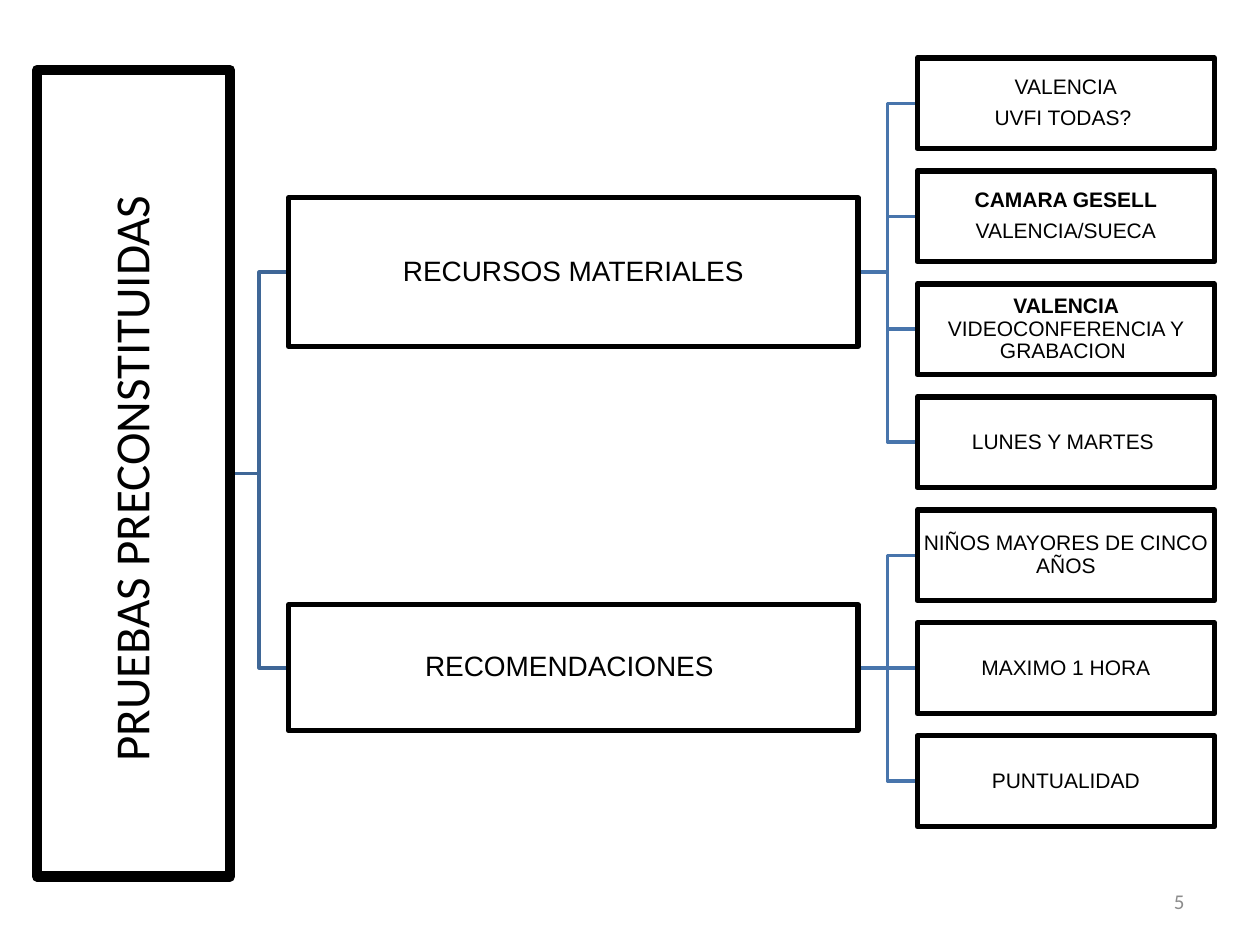
from dataclasses import dataclass

from lxml.etree import SubElement
from pptx import Presentation
from pptx.dml.color import RGBColor
from pptx.enum.shapes import MSO_CONNECTOR, MSO_SHAPE
from pptx.enum.text import MSO_ANCHOR, PP_ALIGN
from pptx.oxml.ns import qn
from pptx.slide import Slide
from pptx.util import Inches, Pt

BLACK = RGBColor(0x00, 0x00, 0x00)
GRAY = RGBColor(0x8C, 0x8C, 0x8C)
TRUNK_BLUE = RGBColor(0x3F, 0x67, 0x97)
BRANCH_BLUE = RGBColor(0x48, 0x75, 0xAC)


@dataclass
class TextRun:
    text: str
    bold: bool = False


@dataclass
class Box:
    left: float
    top: float
    width: float
    height: float
    paragraphs: list[list[TextRun]]
    size: float
    font: str = "Arial"
    border: float = 3
    inset: float = 0.01
    rotation: float = 0

    @property
    def middle(self) -> float:
        return round(self.top + self.height / 2, 2)

    @property
    def left_edge(self) -> float:
        return self.left + (self.width - self.height) / 2 if self.rotation else self.left

    @property
    def right_edge(self) -> float:
        return self.left_edge + (self.height if self.rotation else self.width)


@dataclass
class Branch:
    box: Box
    leaves: list[Box]


def leaf(row: int, *paragraphs: list[TextRun]) -> Box:
    pitch = (5.84 - 0.46) / 6
    return Box(7.28, 0.46 + row * pitch, 2.36, 0.72, list(paragraphs), 12)


def draw_box(slide: Slide, box: Box) -> None:
    shape = slide.shapes.add_shape(
        MSO_SHAPE.RECTANGLE,
        Inches(box.left), Inches(box.top), Inches(box.width), Inches(box.height),
    )
    shape.rotation = box.rotation
    shape.shadow.inherit = False
    shape.fill.background()
    shape.line.color.rgb = BLACK
    shape.line.width = Pt(box.border)
    frame = shape.text_frame
    frame.word_wrap = True
    frame.vertical_anchor = MSO_ANCHOR.MIDDLE
    frame.margin_left = frame.margin_right = Inches(box.inset)
    frame.margin_top = frame.margin_bottom = Inches(box.inset)
    for index, runs in enumerate(box.paragraphs):
        paragraph = frame.add_paragraph() if index else frame.paragraphs[0]
        paragraph.alignment = PP_ALIGN.CENTER
        paragraph.line_spacing = 0.9
        paragraph.space_after = Pt(box.size * 0.4)
        for text_run in runs:
            run = paragraph.add_run()
            run.text = text_run.text
            run.font.name = box.font
            run.font.size = Pt(box.size)
            run.font.bold = text_run.bold
            run.font.color.rgb = BLACK


def draw_link(slide: Slide, parent: Box, child: Box, color: RGBColor) -> None:
    start_x, end_x = Inches(parent.right_edge), Inches(child.left_edge)
    start_y, end_y = Inches(parent.middle), Inches(child.middle)
    if abs(end_y - start_y) < Inches(0.02):
        link = slide.shapes.add_connector(
            MSO_CONNECTOR.STRAIGHT, start_x, start_y, end_x, start_y
        )
        SubElement(link._element.spPr, qn("a:effectLst"))
    else:
        middle_x = (start_x + end_x) // 2
        builder = slide.shapes.build_freeform(start_x, start_y)
        builder.add_line_segments(
            [(middle_x, start_y), (middle_x, end_y), (end_x, end_y)], close=False
        )
        link = builder.convert_to_shape()
        link.shadow.inherit = False
        link.fill.background()
    link.line.color.rgb = color
    link.line.width = Pt(2)


def draw_page_number(slide: Slide, number: str) -> None:
    text_box = slide.shapes.add_textbox(Inches(7.17), Inches(6.95), Inches(2.33), Inches(0.4))
    frame = text_box.text_frame
    frame.word_wrap = True
    frame.vertical_anchor = MSO_ANCHOR.MIDDLE
    paragraph = frame.paragraphs[0]
    paragraph.alignment = PP_ALIGN.RIGHT
    run = paragraph.add_run()
    run.text = number
    run.font.name = "Calibri"
    run.font.size = Pt(12)
    run.font.color.rgb = GRAY


def main() -> None:
    presentation = Presentation()
    presentation.slide_width = Inches(10)
    presentation.slide_height = Inches(7.5)
    slide = presentation.slides.add_slide(presentation.slide_layouts[6])

    root = Box(
        -2.14, 2.99, 6.4, 1.53, [[TextRun("PRUEBAS PRECONSTITUIDAS ")]],
        28, "Calibri", border=6, inset=0.02, rotation=270,
    )
    branches = [
        Branch(
            Box(2.29, 1.57, 4.52, 1.18, [[TextRun("RECURSOS MATERIALES")]], 16),
            [
                leaf(0, [TextRun("VALENCIA")], [TextRun("UVFI TODAS? ")]),
                leaf(1, [TextRun("CAMARA GESELL", True)], [TextRun("VALENCIA/SUECA")]),
                leaf(2, [TextRun("VALENCIA ", True),
                         TextRun("VIDEOCONFERENCIA Y GRABACION ")]),
                leaf(3, [TextRun("LUNES Y MARTES ")]),
            ],
        ),
        Branch(
            Box(2.29, 4.8, 4.52, 1, [[TextRun("RECOMENDACIONES ")]], 16),
            [
                leaf(4, [TextRun("NIÑOS MAYORES DE CINCO AÑOS")]),
                leaf(5, [TextRun("MAXIMO 1 HORA")]),
                leaf(6, [TextRun("PUNTUALIDAD")]),
            ],
        ),
    ]

    draw_page_number(slide, "5")
    for branch in branches:
        draw_link(slide, root, branch.box, TRUNK_BLUE)
        for child in branch.leaves:
            draw_link(slide, branch.box, child, BRANCH_BLUE)
    draw_box(slide, root)
    for branch in branches:
        for box in [branch.box, *branch.leaves]:
            draw_box(slide, box)

    presentation.save("out.pptx")


if __name__ == "__main__":
    main()
